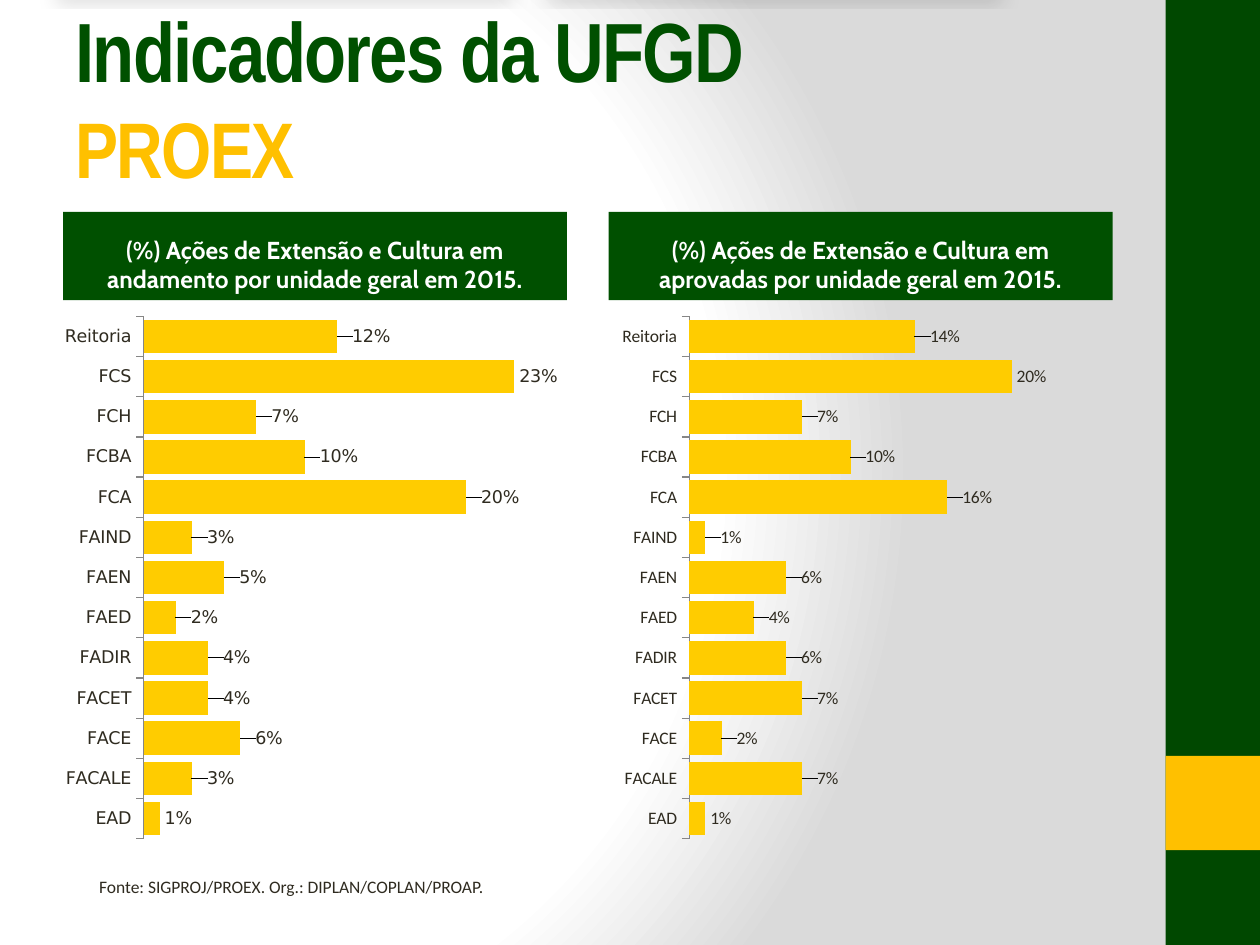
from collections import namedtuple

from pptx import Presentation
from pptx.chart.data import CategoryChartData
from pptx.dml.color import RGBColor
from pptx.enum.chart import XL_CHART_TYPE, XL_LABEL_POSITION, XL_TICK_MARK
from pptx.enum.shapes import MSO_SHAPE
from pptx.enum.text import MSO_ANCHOR, MSO_AUTO_SIZE, PP_ALIGN
from pptx.oxml import parse_xml
from pptx.oxml.ns import nsdecls
from pptx.util import Cm, Pt

BAR = XL_CHART_TYPE.BAR_CLUSTERED
OUTSIDE_END = XL_LABEL_POSITION.OUTSIDE_END
TICK_OUT = XL_TICK_MARK.OUTSIDE
RECTANGLE = MSO_SHAPE.RECTANGLE
MIDDLE, BOTTOM = MSO_ANCHOR.MIDDLE, MSO_ANCHOR.BOTTOM
NO_FIT = MSO_AUTO_SIZE.NONE
LEFT, CENTER = PP_ALIGN.LEFT, PP_ALIGN.CENTER

COLORS = {
    "side": "004800", "green": "005000", "gold": "FFC000", "bar": "FFCC00",
    "text": "2F2B20", "axis": "868686", "white": "FFFFFF", "grey": "DADADA",
}
Box = namedtuple("Box", "left top width height")  # centimetres

UNITS = ["EAD", "FACALE", "FACE", "FACET", "FADIR", "FAED", "FAEN",
         "FAIND", "FCA", "FCBA", "FCH", "FCS", "Reitoria"]
CLOSE_LABELS = ("EAD", "FCS")  # labels that stay next to their bar
PANELS = [
    {"left": 1.27, "font": "DejaVu Sans",
     "heading": "(%) Ações de Extensão e Cultura em andamento por unidade geral em 2015.",
     "percent": [1, 3, 6, 4, 4, 2, 5, 3, 20, 10, 7, 23, 12]},
    {"left": 12.27, "font": "Calibri",
     "heading": "(%) Ações de Extensão e Cultura em aprovadas por unidade geral em 2015.",
     "percent": [1, 7, 2, 7, 6, 4, 6, 1, 16, 10, 7, 20, 14]},
]


def color(name):
    return RGBColor.from_string(COLORS[name])


def place(shape, box):
    for name, value in box._asdict().items():
        setattr(shape, name, Cm(value))


def format_font(font, color_name, **values):
    for name, value in values.items():
        setattr(font, name, value)
    font.color.rgb = color(color_name)


def manual_layout(**values):
    parts = "".join(f'<c:{name} val="{value}"/>' for name, value in values.items())
    return parse_xml(f'<c:layout {nsdecls("c")}><c:manualLayout>{parts}'
                     '</c:manualLayout></c:layout>')


def paint_background(page):
    page.background.fill.solid()
    stops = "".join(
        f'<a:gs pos="{position}"><a:srgbClr val="{COLORS[name]}"/></a:gs>'
        for position, name in [(0, "white"), (75000, "white"), (100000, "grey")])
    gradient = parse_xml(
        f'<a:gradFill {nsdecls("a")} rotWithShape="1"><a:gsLst>{stops}</a:gsLst>'
        '<a:path path="circle"><a:fillToRect l="20000" t="50000" r="100000" b="50000"/>'
        '</a:path></a:gradFill>')
    solid = page._element.xpath(".//p:bgPr/a:solidFill")[0]
    solid.getparent().replace(solid, gradient)


def add_side_band(page, box):
    accent = Box(box.left, box.top + 15.24, box.width, box.width)
    for part, name in [(box, "side"), (accent, "gold")]:
        band = page.shapes.add_shape(RECTANGLE, *map(Cm, part))
        band.shadow.inherit = False
        band.fill.solid()
        band.fill.fore_color.rgb = color(name)
        band.line.fill.background()


def fill_title(title, box):
    place(title, box)
    frame = title.text_frame
    frame.auto_size = NO_FIT
    frame.vertical_anchor = MIDDLE
    para = frame.paragraphs[0]
    para.alignment = LEFT
    lines = [("Indicadores da UFGD", 48, "green"), ("PROEX", 45, "gold")]
    for number, (text, size, name) in enumerate(lines):
        if number:
            para.add_line_break()
        span = para.add_run()
        span.text = text
        format_font(span.font, name, name="Arial Narrow", size=Pt(size), bold=True)
        span.font._element.set("spc", "-100")


def fill_heading(heading, box, text):
    place(heading, box)
    heading.fill.solid()
    heading.fill.fore_color.rgb = color("green")
    heading._element.spPr.append(parse_xml(
        f'<a:effectLst {nsdecls("a")}><a:outerShdw blurRad="152400" dist="317500" '
        'dir="5400000" sx="90000" sy="-19000" rotWithShape="0"><a:srgbClr val="000000">'
        '<a:alpha val="15000"/></a:srgbClr></a:outerShdw></a:effectLst>'))
    frame = heading.text_frame
    frame.auto_size = NO_FIT
    frame.vertical_anchor = BOTTOM
    para = frame.paragraphs[0]
    para.alignment = CENTER
    span = para.add_run()
    span.text = text
    format_font(span.font, "white", name="Cabin", size=Pt(14), bold=True)


def add_unit_chart(page, box, percent, font_name):
    data = CategoryChartData(number_format="0%")
    data.categories = UNITS
    data.add_series("Series 1", [value / 100 for value in percent])
    chart = page.shapes.add_chart(BAR, *map(Cm, box), data).chart
    chart.has_legend = chart.has_title = False
    format_font(chart.font, "text", name=font_name, size=Pt(10))

    # Axes and plot area
    category_axis, value_axis = chart.category_axis, chart.value_axis
    category_axis.major_tick_mark = TICK_OUT
    category_axis.format.line.color.rgb = color("axis")
    value_axis.has_major_gridlines = False
    value_axis.visible = False
    value_axis.minimum_scale, value_axis.maximum_scale = 0, 0.25
    plot_area = chart._chartSpace.chart.plotArea
    for old in plot_area.xpath("./c:layout"):
        plot_area.remove(old)
    plot_area.insert(0, manual_layout(layoutTarget="inner", xMode="edge", yMode="edge",
                                      x=0.16, y=0.03, w=0.8, h=0.96))

    # Bars and their labels
    plot = chart.plots[0]
    plot.gap_width = 20
    plot.vary_by_categories = False
    series = plot.series[0]
    series.format.fill.solid()
    series.format.fill.fore_color.rgb = color("bar")
    labels = series.data_labels
    labels.show_value = True
    labels.number_format, labels.number_format_is_linked = "0%", False
    labels.position = OUTSIDE_END
    for index, unit in enumerate(UNITS):
        if unit not in CLOSE_LABELS:
            series.points[index].data_label.position = OUTSIDE_END
    for label in series._element.xpath("./c:dLbls/c:dLbl"):
        label.insert(1, manual_layout(x=0.02, y=0))


def add_source(page, box):
    frame = page.shapes.add_textbox(*map(Cm, box)).text_frame
    frame.word_wrap = True
    span = frame.paragraphs[0].add_run()
    span.text = "Fonte: SIGPROJ/PROEX. Org.: DIPLAN/COPLAN/PROAP."
    format_font(span.font, "text", name="Calibri", size=Pt(10))


def main():
    deck = Presentation()
    deck.slide_width, deck.slide_height = Cm(25.4), Cm(19.05)
    page = deck.slides.add_slide(deck.slide_layouts.get_by_name("Comparison"))
    title, first, first_content, second, second_content = page.placeholders
    for unused in (first_content, second_content):
        unused._element.getparent().remove(unused._element)

    paint_background(page)
    add_side_band(page, Box(23.5, 0, 1.9, 19.05))
    fill_title(title, Box(1.27, 0.76, 21.16, 2.36))
    for panel, heading in zip(PANELS, (first, second)):
        fill_heading(heading, Box(panel["left"], 4.27, 10.16, 1.78), panel["heading"])
        add_unit_chart(page, Box(panel["left"], 6.05, 10.16, 10.97),
                       panel["percent"], panel["font"])
    add_source(page, Box(1.75, 17.53, 8.61, 0.69))
    deck.save("out.pptx")


if __name__ == "__main__":
    main()
